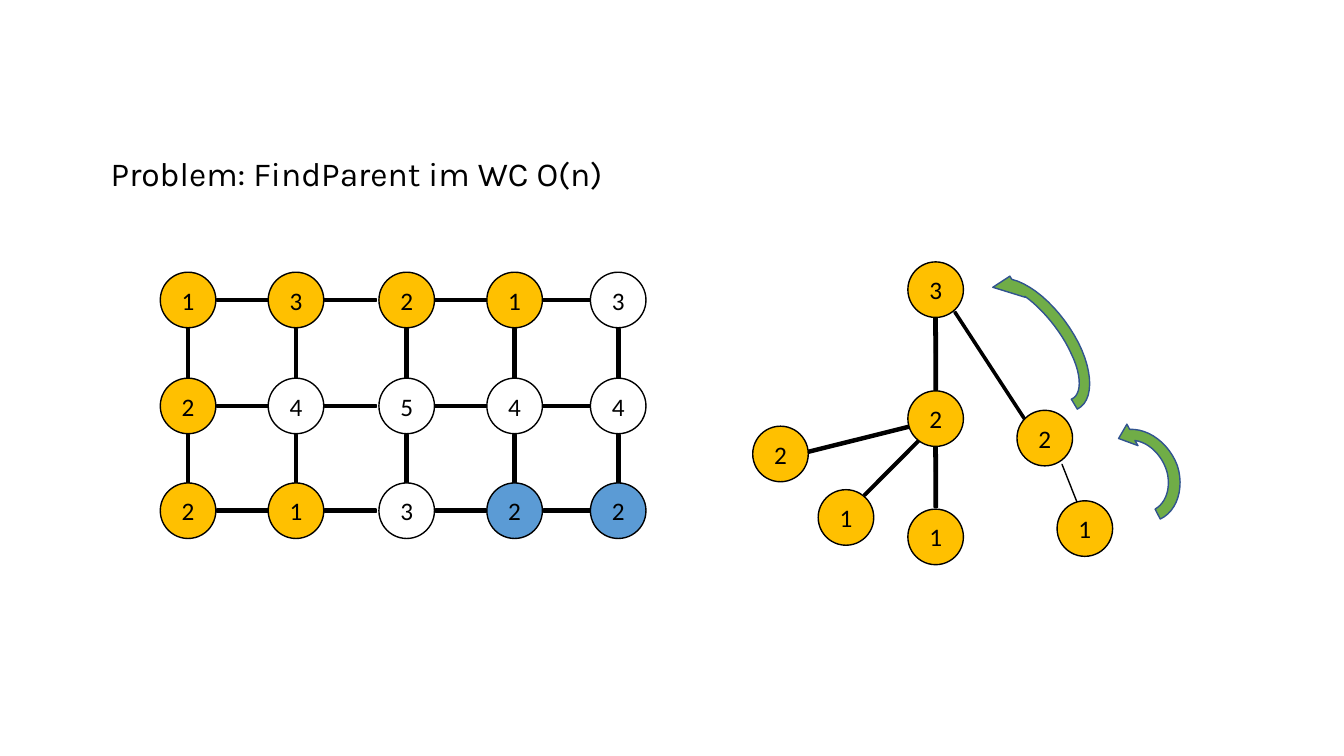
from dataclasses import dataclass
from itertools import product

from pptx import Presentation
from pptx.dml.color import RGBColor
from pptx.enum.shapes import MSO_SHAPE as Preset
from pptx.enum.text import MSO_ANCHOR as Anchor, PP_ALIGN as Align
from pptx.slide import Slide
from pptx.util import Cm, Pt

BLACK, WHITE, AMBER, BLUE = "000000", "FFFFFF", "FFC000", "5B9BD5"
GREEN, NAVY = "70AD47", "31538F"


def rgb(value):
    return RGBColor.from_string(value)


def bezier_points(controls, steps=12):
    points = [controls[0]]
    for first in range(0, len(controls) - 1, 3):
        segment = controls[first:first + 4]
        for step in range(1, steps + 1):
            t = step / steps
            weights = ((1 - t) ** 3, 3 * t * (1 - t) ** 2, 3 * t * t * (1 - t), t ** 3)
            points.append(tuple(
                sum(weight * point[axis] for weight, point in zip(weights, segment))
                for axis in (0, 1)))
    return points


@dataclass
class Board:
    slide: Slide
    title_font: str = "Karla"
    node_font: str = "Calibri"
    node_size: float = 1.4

    def add_wording(self, paragraph, wording, font, size):
        run = paragraph.add_run()
        run.text = wording
        run.font.name = font
        run.font.size = Pt(size)
        run.font.color.rgb = rgb(BLACK)

    def paint(self, shape, fill, line=BLACK):
        shape.shadow.inherit = False
        shape.fill.solid()
        shape.fill.fore_color.rgb = rgb(fill)
        shape.line.color.rgb = rgb(line)
        shape.line.width = Pt(1)

    def preset(self, kind, x, y, width, height, fill):
        shape = self.slide.shapes.add_shape(
            kind, Cm(x - width / 2), Cm(y - height / 2), Cm(width), Cm(height))
        self.paint(shape, fill)
        return shape

    def title(self, wording, left, top, width, height):
        heading = self.slide.shapes.add_textbox(Cm(left), Cm(top), Cm(width), Cm(height))
        heading.text_frame.word_wrap = True
        self.add_wording(heading.text_frame.paragraphs[0], wording, self.title_font, 24)

    def node(self, label, x, y, fill=AMBER):
        circle = self.preset(Preset.OVAL, x, y, self.node_size, self.node_size, fill)
        circle.text_frame.vertical_anchor = Anchor.MIDDLE
        paragraph = circle.text_frame.paragraphs[0]
        paragraph.alignment = Align.CENTER
        self.add_wording(paragraph, label, self.node_font, 18)

    def edge(self, x, y, length=1.75, thickness=0.36, angle=0, weight=0.235):
        bar = self.preset(Preset.MATH_MINUS, x, y, length, thickness, BLACK)
        bar.adjustments[0] = weight
        bar.rotation = angle

    def curved_arrow(self, outer, head, inner):
        outline = [(Cm(x), Cm(y))
                   for x, y in bezier_points(outer) + head + bezier_points(inner)]
        builder = self.slide.shapes.build_freeform(*outline[0])
        builder.add_line_segments(outline[1:], close=True)
        self.paint(builder.convert_to_shape(), GREEN, NAVY)


def draw_grid(board):
    columns = (4.74, 7.46, 10.25, 12.97, 15.58)
    rows = (7.56, 10.23, 12.87)
    half_step = 1.37
    labels = ("13213", "24544", "21322")
    fills = ((AMBER,) * 4 + (WHITE,),
             (AMBER,) + (WHITE,) * 4,
             (AMBER, AMBER, WHITE, BLUE, BLUE))
    for x, y in product(columns[:-1], rows):
        board.edge(x + half_step, y)
    for x, y in product(columns, rows[:-1]):
        board.edge(x, y + half_step, angle=90)
    for y, row_labels, row_fills in zip(rows, labels, fills):
        for x, label, fill in zip(columns, row_labels, row_fills):
            board.node(label, x, y, fill)


def draw_tree(board):
    trunk = 23.58
    edges = ((trunk, 9.02, 3.43, 0.36, 89.8),
             (24.94, 9.21, 4.37, 0.23, 56.9),
             (trunk, 11.99, 2.16, 0.36, 89.8),
             (22.49, 11.77, 2.72, 0.28, 134.9),
             (21.55, 11.09, 3.99, 0.33, 166),
             (26.95, 12.17, 1.37, 0.36, 68.4, 0))
    nodes = (("3", trunk, 7.3), ("2", trunk, 10.55), ("1", trunk, 13.53),
             ("2", 26.33, 11.04), ("1", 27.34, 13.32),
             ("1", 21.32, 13.04), ("2", 19.67, 11.44))
    for edge in edges:
        board.edge(*edge)
    for node in nodes:
        board.node(*node)


def draw_parent_arrows(board):
    board.curved_arrow(
        outer=[(29.24, 13.08), (29.67, 12.88), (29.85, 12.29), (29.67, 11.73),
               (29.46, 11.18), (28.96, 10.8), (28.47, 10.82)],
        head=[(28.4, 10.69), (28.19, 11.05), (28.68, 11.23)],
        inner=[(28.6, 11.1), (28.96, 11.15), (29.29, 11.48), (29.41, 11.89),
               (29.51, 12.29), (29.39, 12.67), (29.11, 12.83)])
    board.curved_arrow(
        outer=[(27.15, 10.31), (27.56, 10.11), (27.56, 9.4), (27.18, 8.64),
               (26.77, 7.85), (26.09, 7.19), (25.5, 7.04)],
        head=[(25.45, 6.96), (25.02, 7.24), (25.83, 7.49)],
        inner=[(25.83, 7.47), (26.26, 7.77), (26.75, 8.36), (27, 8.92),
               (27.28, 9.5), (27.25, 9.96), (27, 10.06)])


def main():
    deck = Presentation()
    deck.slide_width, deck.slide_height = Cm(33.87), Cm(19.05)
    board = Board(deck.slides.add_slide(deck.slide_layouts[6]))
    board.title("Problem: FindParent im WC O(n)", 2.54, 3.73, 23.24, 1.27)
    draw_grid(board)
    draw_parent_arrows(board)
    draw_tree(board)
    deck.save("out.pptx")


if __name__ == "__main__":
    main()
